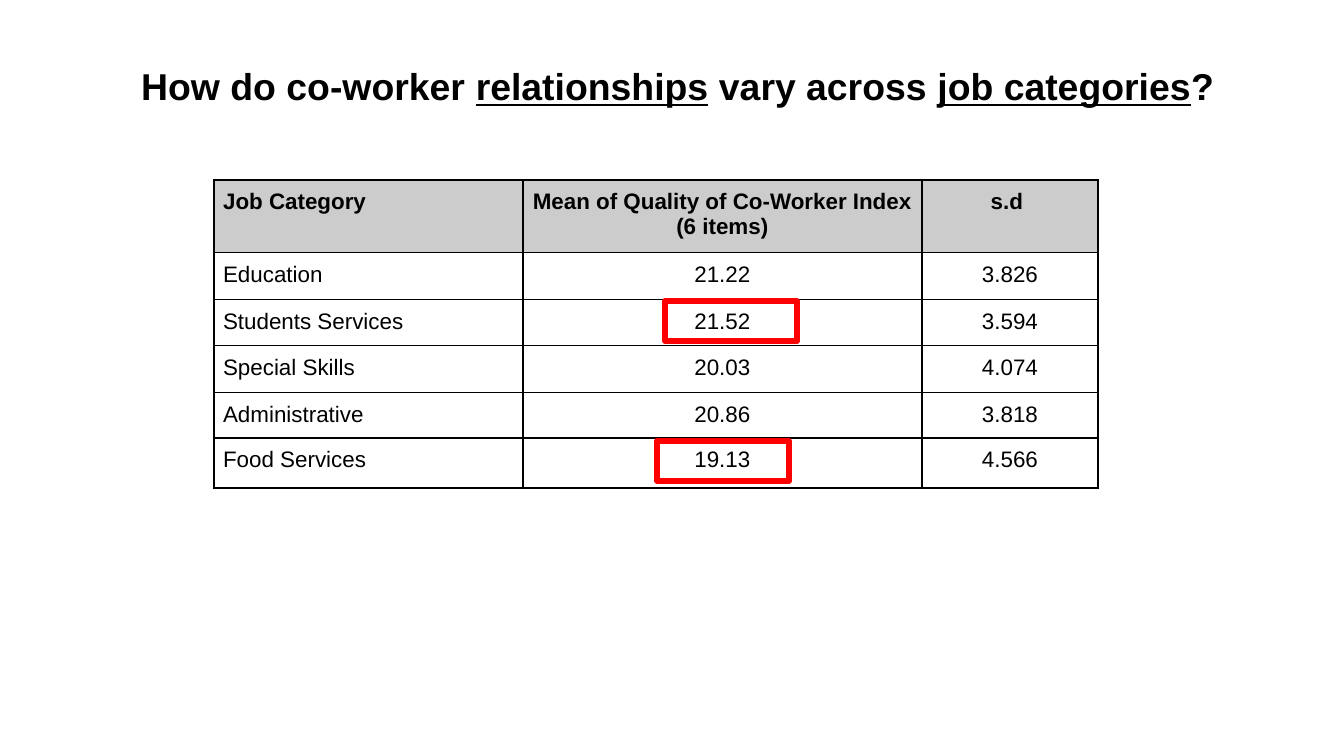
"""Build a slide comparing co-worker relationship scores across job categories."""
from dataclasses import dataclass
from typing import NamedTuple

from lxml.etree import SubElement
from pptx import Presentation
from pptx.dml.color import RGBColor
from pptx.enum.shapes import MSO_SHAPE as Shape
from pptx.enum.text import PP_ALIGN as Align
from pptx.oxml.ns import qn
from pptx.slide import Slide
from pptx.table import _Cell as Cell
from pptx.text.text import _Paragraph as Paragraph
from pptx.util import Inches, Pt


@dataclass(frozen=True)
class Theme:
    font: str = "Arial"
    title_size: int = 20
    table_size: int = 12
    text: str = "000000"
    header: str = "CCCCCC"
    border: str = "000000"
    border_width: float = 1
    highlight: str = "FF0000"
    highlight_width: float = 3


class TitlePart(NamedTuple):
    text: str
    underlined: bool = False


class JobScore(NamedTuple):
    category: str
    mean: str
    deviation: str


class Highlight(NamedTuple):
    left: float
    top: float
    width: float = 0.98
    height: float = 0.3


THEME = Theme()
SLIDE_WIDTH = 10
SLIDE_HEIGHT = SLIDE_WIDTH * 9 / 16
TITLE = [
    TitlePart("How do co-worker "),
    TitlePart("relationships", True),
    TitlePart(" vary across "),
    TitlePart("job categories", True),
    TitlePart("? "),
]
SCORES = [
    JobScore("Job Category", "Mean of Quality of Co-Worker Index (6 items)", "s.d "),
    JobScore("Education", "21.22", "3.826"),
    JobScore("Students Services", "21.52", "3.594"),
    JobScore("Special Skills", "20.03", "4.074"),
    JobScore("Administrative", "20.86", "3.818"),
    JobScore("Food Services", "19.13", "4.566"),
]
COLUMN_WIDTHS = [2.3, 2.97, 1.31]
ROW_HEIGHTS = [0.54, 0.35, 0.34, 0.35, 0.34, 0.37]
HIGHLIGHTS = [Highlight(4.95, 2.24), Highlight(4.89, 3.28)]


def style_paragraph(paragraph: Paragraph, size: int, bold: bool, align: Align) -> None:
    paragraph.alignment = align
    font = paragraph.font
    font.name, font.size, font.bold = THEME.font, Pt(size), bold
    font.color.rgb = RGBColor.from_string(THEME.text)


def add_title(slide: Slide) -> None:
    box = slide.shapes.add_textbox(Inches(0.08), Inches(0.37), Inches(10), Inches(0.56))
    frame = box.text_frame
    frame.word_wrap = True
    frame.margin_left = frame.margin_right = Inches(0.1)
    frame.margin_top = frame.margin_bottom = Inches(0.1)
    paragraph = frame.paragraphs[0]
    style_paragraph(paragraph, THEME.title_size, True, Align.CENTER)
    for part in TITLE:
        run = paragraph.add_run()
        run.text = part.text
        run.font.underline = part.underlined


def add_borders(cell: Cell) -> None:
    properties = cell._tc.get_or_add_tcPr()
    for index, side in enumerate(("lnL", "lnR", "lnT", "lnB")):
        line = properties.makeelement(qn(f"a:{side}"), {"w": str(Pt(THEME.border_width))})
        fill = SubElement(line, qn("a:solidFill"))
        SubElement(fill, qn("a:srgbClr"), val=THEME.border)
        properties.insert(index, line)


def fill_cell(cell: Cell, text: str, is_header: bool, align: Align) -> None:
    cell.text = text
    cell.margin_left = cell.margin_right = Inches(0.07)
    cell.margin_top = cell.margin_bottom = Inches(0.07)
    style_paragraph(cell.text_frame.paragraphs[0], THEME.table_size, is_header, align)
    if is_header:
        cell.fill.solid()
        cell.fill.fore_color.rgb = RGBColor.from_string(THEME.header)
    else:
        cell.fill.background()
    add_borders(cell)


def add_score_table(slide: Slide) -> None:
    table = slide.shapes.add_table(
        len(SCORES), len(COLUMN_WIDTHS), Inches(1.59), Inches(1.34),
        Inches(sum(COLUMN_WIDTHS)), Inches(sum(ROW_HEIGHTS)),
    ).table
    table.first_row = table.horz_banding = False
    for column, width in zip(table.columns, COLUMN_WIDTHS):
        column.width = Inches(width)
    for row_index, (score, height) in enumerate(zip(SCORES, ROW_HEIGHTS)):
        table.rows[row_index].height = Inches(height)
        for column_index, text in enumerate(score):
            align = Align.CENTER if column_index else Align.LEFT
            fill_cell(table.cell(row_index, column_index), text, row_index == 0, align)


def add_highlight(slide: Slide, highlight: Highlight) -> None:
    shape = slide.shapes.add_shape(Shape.RECTANGLE, *map(Inches, highlight))
    shape.shadow.inherit = False
    shape.fill.background()
    shape.line.color.rgb = RGBColor.from_string(THEME.highlight)
    shape.line.width = Pt(THEME.highlight_width)


def main() -> None:
    presentation = Presentation()
    presentation.slide_width = Inches(SLIDE_WIDTH)
    presentation.slide_height = Inches(SLIDE_HEIGHT)
    slide = presentation.slides.add_slide(presentation.slide_layouts[6])
    add_score_table(slide)
    add_title(slide)
    for highlight in HIGHLIGHTS:
        add_highlight(slide, highlight)
    presentation.save("out.pptx")


if __name__ == "__main__":
    main()
